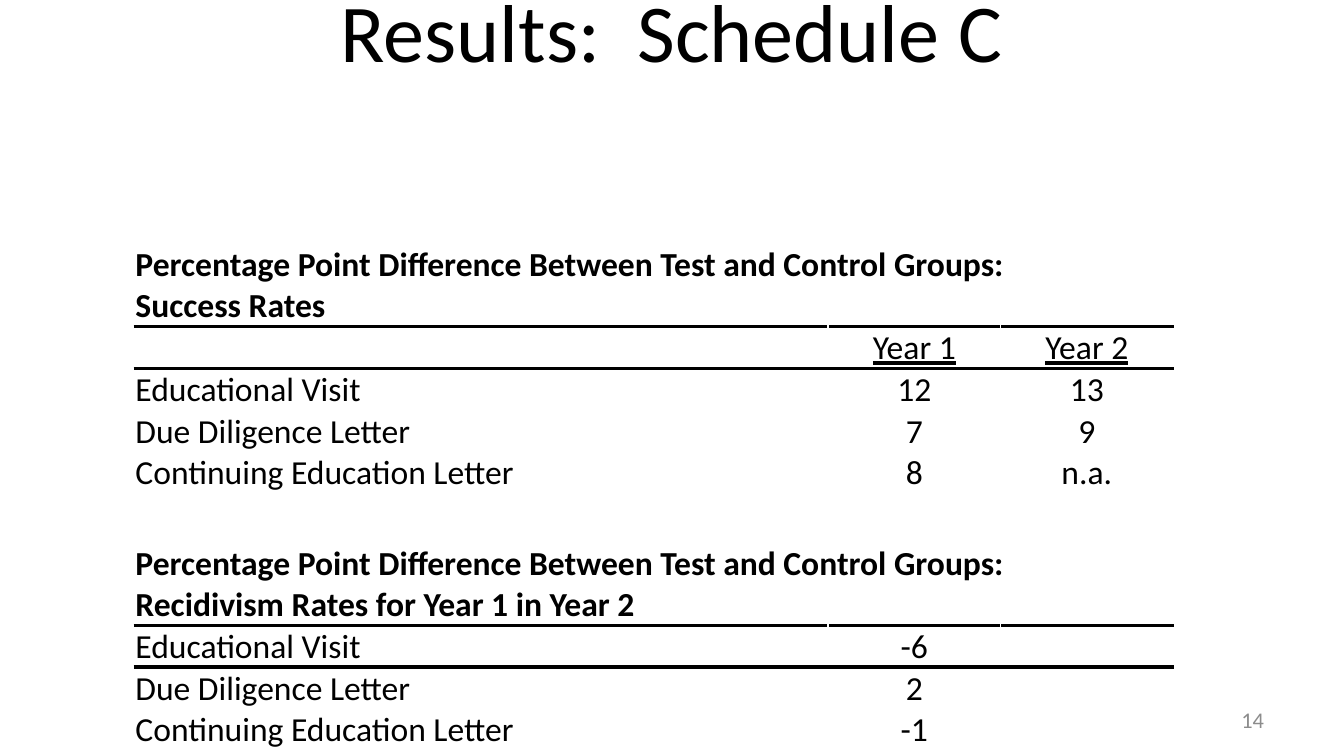
from lxml import etree
from pptx import Presentation
from pptx import util as u
from pptx.dml.color import RGBColor
from pptx.enum import text
from pptx.oxml import ns

Cm, Pt = u.Cm, u.Pt
LEFT, MID, RIGHT = text.PP_ALIGN.LEFT, text.PP_ALIGN.CENTER, text.PP_ALIGN.RIGHT
BOTTOM = text.MSO_ANCHOR.BOTTOM
BLACK, GRAY = "000000", "8C8C8C"

HEAD = "Percentage Point Difference Between Test and Control Groups:"
ROWS = [
    (HEAD + "\vSuccess Rates", "", ""),
    ("", "Year 1", "Year 2"),
    ("Educational Visit", "12", "13"),
    ("Due Diligence Letter", "7", "9"),
    ("Continuing Education Letter", "8", "n.a."),
    ("", "", ""),
    (HEAD + "\vRecidivism Rates for Year 1 in Year 2", "", ""),
    ("Educational Visit", "-6", ""),
    ("Due Diligence Letter", "2", ""),
    ("Continuing Education Letter", "-1", ""),
]
WIDTHS = (13.11, 3.26, 3.26)
TALL = {0: 2.31, 6: 1.7}  # heading rows and their heights


def paint(code):
    return RGBColor.from_string(code)


class Page:
    font = "Calibri"

    def __init__(self, deck):
        self.slide = deck.slides.add_slide(deck.slide_layouts[6])

    def style(self, frame, words, size, color=BLACK, align=LEFT, bold=False, under=False):
        """Put words in a text frame and format them."""
        frame.text = words
        frame.word_wrap = True
        for par in frame.paragraphs:
            par.alignment = align
            for run in par.runs:
                font = run.font
                font.name, font.size = self.font, Pt(size)
                font.bold, font.underline = bold, under
                font.color.rgb = paint(color)

    def label(self, box, words, size, color, align, anchor, foot=0.13):
        """Add a text box; foot is its bottom inset in cm."""
        frame = self.slide.shapes.add_textbox(*map(Cm, box)).text_frame
        self.style(frame, words, size, color, align)
        frame.vertical_anchor = anchor
        frame.margin_bottom = Cm(foot)

    def rule(self, cell, side):
        """Draw a 2 pt border on one side (lnT or lnB) of a cell."""
        line = etree.Element(ns.qn("a:" + side), w=str(Pt(2)))
        fill = etree.SubElement(line, ns.qn("a:solidFill"))
        etree.SubElement(fill, ns.qn("a:srgbClr"), val=BLACK)
        cell._tc.get_or_add_tcPr().insert(0, line)

    def table(self, left, top, rows, widths, tall, low=0.79):
        highs = [tall.get(i, low) for i in range(len(rows))]
        box = left, top, sum(widths), sum(highs)
        grid = self.slide.shapes.add_table(len(rows), len(widths), *map(Cm, box)).table
        grid.first_row = grid.horz_banding = False
        for col, wide in zip(grid.columns, widths):
            col.width = Cm(wide)
        for i, row in enumerate(rows):
            grid.rows[i].height = Cm(highs[i])
            for j, words in enumerate(row):
                cell = grid.cell(i, j)
                self.style(cell.text_frame, words, 18, align=MID if j else LEFT,
                           bold=i in tall, under=words.startswith("Year"))
                cell.vertical_anchor = BOTTOM
                cell.margin_left = cell.margin_right = cell.margin_top = Cm(0.02)
                cell.margin_bottom = 0
                cell.fill.background()
                if i in tall:
                    self.rule(cell, "lnB")
                elif i - 1 in tall:
                    self.rule(cell, "lnT")
        for i in tall:
            grid.cell(i, 0).merge(grid.cell(i, len(widths) - 1))


def main():
    deck = Presentation()
    deck.slide_width, deck.slide_height = Cm(25.4), Cm(14.29)
    page = Page(deck)
    page.label((18.21, 13.23, 5.93, 0.76), "14", 12, GRAY, RIGHT, text.MSO_ANCHOR.MIDDLE)
    page.label((1.27, 0.58, 22.86, 1.83), "Results:  Schedule C", 44, BLACK, MID, BOTTOM, 0.92)
    page.table(2.54, 3.86, ROWS, WIDTHS, TALL)
    deck.save("out.pptx")


if __name__ == "__main__":
    main()
